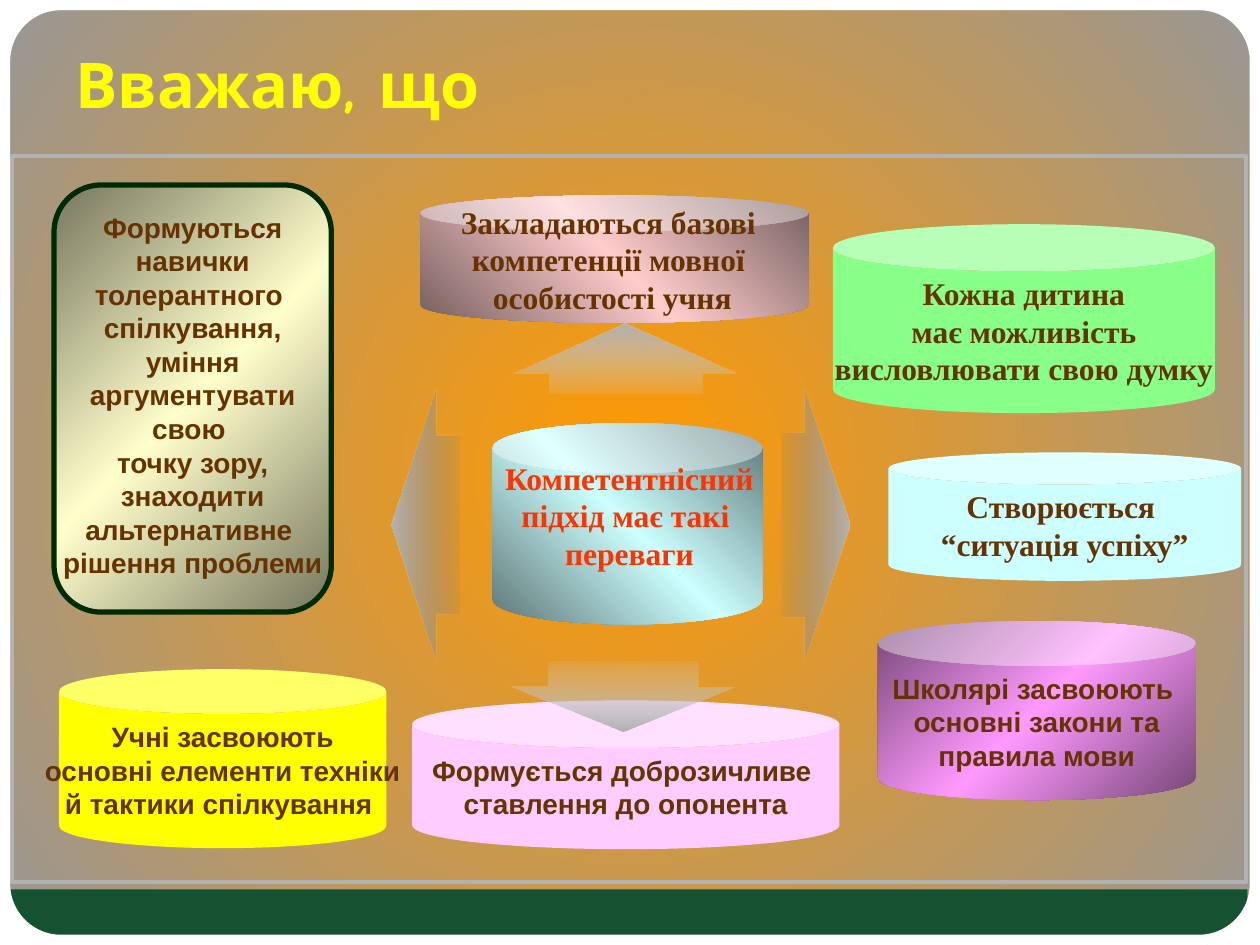
import pptx
import pptx.util
import pptx.dml.color
import pptx.enum.shapes
import pptx.enum.text
import pptx.oxml.ns
from lxml import etree

Cm, Pt = pptx.util.Cm, pptx.util.Pt
RGB = pptx.dml.color.RGBColor
KIND = pptx.enum.shapes.MSO_SHAPE
ALIGN = pptx.enum.text.PP_ALIGN
MIDDLE = pptx.enum.text.MSO_ANCHOR.MIDDLE
FIT = pptx.enum.text.MSO_AUTO_SIZE.SHAPE_TO_FIT_TEXT
qn = pptx.oxml.ns.qn

WHITE = RGB(0xFF, 0xFF, 0xFF)
ORANGE = RGB(0xFF, 0x99, 0x00)
SMOKE = RGB(0x97, 0x97, 0x97)
FOREST = RGB(0x14, 0x52, 0x32)
DARK = RGB(0x00, 0x2A, 0x00)
SILVER = RGB(0xB2, 0xB2, 0xB2)
GREY = RGB(0x7F, 0x7F, 0x7F)
PALE = RGB(0xD2, 0xD2, 0xD2)
BROWN = RGB(0x66, 0x33, 0x00)
RED = RGB(0xFF, 0x33, 0x00)
YELLOW = RGB(0xFF, 0xFF, 0x00)
PINK = RGB(0xFF, 0xCC, 0xFF)
CYAN = RGB(0xCC, 0xFF, 0xFF)
GREEN = RGB(0x88, 0xFF, 0x88)
PLUM = RGB(0x76, 0x47, 0x76)
VIOLET = RGB(0xFF, 0x99, 0xFF)
TEAL = RGB(0x5E, 0x76, 0x76)
OLIVE = RGB(0x76, 0x76, 0x5E)
CREAM = RGB(0xFF, 0xFF, 0xCC)
MAUVE = RGB(0x76, 0x5E, 0x5E)
ROSE = RGB(0xFF, 0xCC, 0xCC)


def blend(fill, root, stops, angle=None):
    """Gradient of (position, colour, opacity) stops; radial without an angle."""
    fill.gradient()
    grad = next(root.iter(qn("a:gradFill")))
    for child in list(grad):
        grad.remove(child)
    group = etree.SubElement(grad, qn("a:gsLst"))
    for pos, color, alpha in stops:
        stop = etree.SubElement(group, qn("a:gs"), pos=str(pos * 1000))
        tint = etree.SubElement(stop, qn("a:srgbClr"), val=str(color))
        if alpha < 100:
            etree.SubElement(tint, qn("a:alpha"), val=str(alpha * 1000))
    if angle is None:
        ring = etree.SubElement(grad, qn("a:path"), path="circle")
        etree.SubElement(ring, qn("a:fillToRect"), l="50000", t="50000", r="50000", b="50000")
    else:
        etree.SubElement(grad, qn("a:lin"), ang=str(angle * 60000), scaled="1")


def write(frame, lines, size, font, color, align=ALIGN.CENTER):
    frame.text = "\n".join(lines)
    for para in frame.paragraphs:
        para.alignment = align
        for run in para.runs:
            run.font.size, run.font.name, run.font.bold = Pt(size), font, True
            run.font.color.rgb = color


deck = pptx.Presentation()
deck.slide_width, deck.slide_height = Cm(25.4), Cm(19.05)
slide = deck.slides.add_slide(deck.slide_layouts[5])
shapes = slide.shapes
back = slide.background.fill
blend(back, slide.element, [(0, ORANGE, 100), (100, SMOKE, 100)])

# Frame: kind, box, adjustment, fill, line, line width
frames = [
    (KIND.RECTANGLE, (0.18, 17.93, 24.97, 1.04), None, FOREST, None, 0),
    (KIND.RECTANGLE, (0.25, 3.15, 24.87, 14.63), None, None, SILVER, 2.25),
    (KIND.ROUNDED_RECTANGLE, (0.1, 0.1, 25.2, 18.85), 0.06, None, WHITE, 6),
]
for kind, box, adj, color, edge, width in frames:
    shape = shapes.add_shape(kind, *map(Cm, box))
    shape.shadow.inherit = False
    if adj:
        shape.adjustments[0] = adj
    if color:
        shape.fill.solid()
        shape.fill.fore_color.rgb = color
    else:
        shape.fill.background()
    if edge:
        shape.line.color.rgb = edge
        shape.line.width = Pt(width)
    else:
        shape.line.fill.background()

corners = [
    [(0, 1.24), (0.36, 0.64), (0.71, 0.15), (1.24, 0), (0, 0)],
    [(1.09, 19.05), (0.53, 18.62), (0.13, 18.21), (0, 17.58), (0, 19.05)],
    [(25.4, 17.75), (25.1, 18.39), (24.77, 18.87), (24.31, 19.05), (25.4, 19.05)],
    [(24.13, 0), (24.77, 0.36), (25.25, 0.74), (25.4, 1.27), (25.4, 0)],
]
for points in corners:
    spots = [(Cm(x), Cm(y)) for x, y in points]
    pen = shapes.build_freeform(*spots[0])
    pen.add_line_segments(spots[1:], close=True)
    corner = pen.convert_to_shape()
    corner.shadow.inherit = False
    corner.fill.solid()
    corner.fill.fore_color.rgb = WHITE
    corner.line.fill.background()

title = shapes.title
title.left, title.top, title.width, title.height = map(Cm, (1.27, 0.89, 22.66, 1.57))
title.text_frame.vertical_anchor = MIDDLE
write(title.text_frame, ["Вважаю, що"], 36, "Comic Neue", YELLOW, ALIGN.LEFT)

sans = (16, "Arial", BROWN)
serif = (18, "Times New Roman", BROWN)
# Back to front: kind (None for a text box), box, adjustments, fill, lines, style.
# A fill is one colour or an angle with its (colour, opacity) stops.
items = [
    (KIND.CAN, (1.19, 13.49, 6.6, 3.61), [0.25], YELLOW,
     ["Учні засвоюють", "основні елементи техніки", "й тактики спілкування "], sans),
    (KIND.CAN, (17.7, 12.52, 6.4, 3.61), [0.25],
     (45, (PLUM, 100), (VIOLET, 100), (PLUM, 100)),
     ["Школярі засвоюють ", "основні закони та", "правила мови"], sans),
    (KIND.CAN, (9.93, 8.53, 5.44, 4.06), [0.25],
     (315, (TEAL, 100), (CYAN, 100), (TEAL, 100)), [], None),
    (None, (9.91, 9.12, 5.56, 2.57), [], None,
     ["Компетентнісний", "підхід має такі ", "переваги"], (18, "Times New Roman", RED)),
    (KIND.LEFT_ARROW, (7.9, 7.85, 1.37, 5.44), [0.66, 0.65],
     (0, (SILVER, 100), (GREY, 12)), [], None),
    (KIND.ROUNDED_RECTANGLE, (1.09, 3.73, 5.59, 8.61), [0.17],
     (45, (OLIVE, 100), (CREAM, 100), (OLIVE, 100)), [], None),
    (None, (0.89, 4.11, 5.99, 8.97), [], None,
     ["Формуються навички толерантного ", "спілкування, уміння аргументувати свою ",
      "точку зору, знаходити альтернативне ", "рішення проблеми"], sans),
    (KIND.RIGHT_ARROW, (15.75, 7.85, 1.37, 5.44), [0.68, 0.66],
     (0, (GREY, 12), (SILVER, 100)), [], None),
    (KIND.CAN, (8.48, 3.94, 7.82, 2.57), [0.28],
     (315, (MAUVE, 100), (ROSE, 100), (MAUVE, 100)), [], None),
    (KIND.UP_ARROW, (10.36, 6.53, 4.5, 1.4), [0.68, 0.71],
     (90, (SILVER, 100), (PALE, 12)), [], None),
    (None, (8.94, 3.96, 6.81, 2.57), [], None,
     ["Закладаються базові ", "компетенції мовної ", "особистості учня"], serif),
    (KIND.CAN, (8.31, 14.12, 8.61, 3), [0.32], PINK,
     ["Формується доброзичливе ", "ставлення до опонента"], sans),
    (KIND.DOWN_ARROW, (10.31, 13.34, 4.5, 1.4), [0.67, 0.64],
     (90, (PALE, 12), (SILVER, 100)), [], None),
    (KIND.CAN, (17.91, 9.12, 7.11, 2.59), [0.25], CYAN,
     ["Створюється ", "“ситуація успіху”"], serif),
    (KIND.CAN, (16.79, 4.52, 7.7, 3.81), [0.25], GREEN,
     ["Кожна дитина", "має можливість", "висловлювати свою думку"], serif),
]
for kind, box, adjs, paint, lines, style in items:
    if kind is None:
        shape = shapes.add_textbox(*map(Cm, box))
        shape.text_frame.word_wrap = True
        shape.text_frame.auto_size = FIT
    else:
        shape = shapes.add_shape(kind, *map(Cm, box))
        shape.shadow.inherit = False
        for i, adj in enumerate(adjs):
            shape.adjustments[i] = adj
        if isinstance(paint, RGB):
            shape.fill.solid()
            shape.fill.fore_color.rgb = paint
        else:
            angle, *tones = paint
            step = 100 // (len(tones) - 1)
            stops = [(i * step, *tone) for i, tone in enumerate(tones)]
            blend(shape.fill, shape.element, stops, angle)
        if kind == KIND.ROUNDED_RECTANGLE:
            shape.line.color.rgb = DARK
            shape.line.width = Pt(3)
        else:
            shape.line.fill.background()
        shape.text_frame.word_wrap = False
        shape.text_frame.vertical_anchor = MIDDLE
    if lines:
        write(shape.text_frame, lines, *style)

deck.save("out.pptx")
